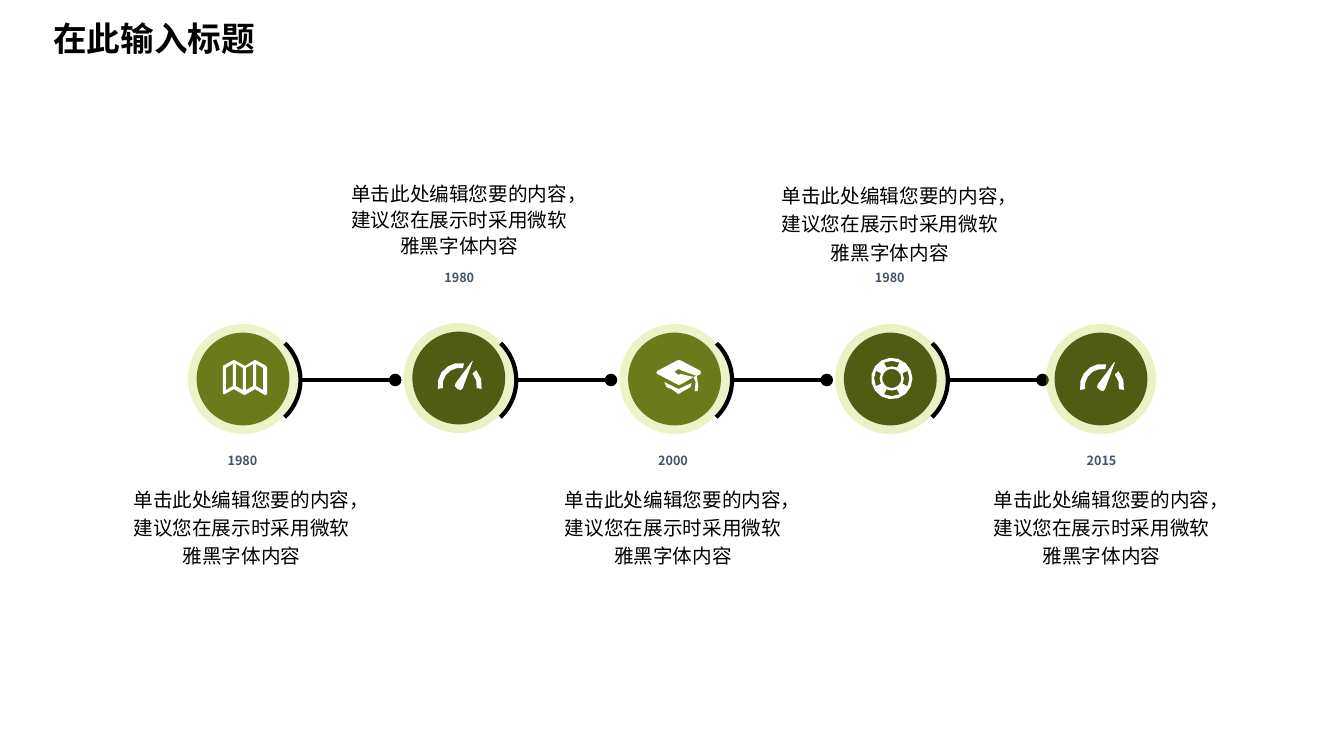
from math import cos, sin, radians
from pptx import Presentation
from pptx.dml.color import RGBColor as RGB
from pptx.enum.shapes import MSO_CONNECTOR as LINK, MSO_SHAPE as KIND
from pptx.enum.text import MSO_AUTO_SIZE as FIT, PP_ALIGN as ALIGN
from pptx.oxml.xmlchemy import OxmlElement as Node
from pptx.util import Inches as In, Pt

FONT = "Noto Sans CJK SC"
BODY = "单击此处编辑您要的内容，建议您在展示时采用微软雅黑字体内容"

deck = Presentation()
deck.slide_width, deck.slide_height = In(13.33), In(7.5)
slide = deck.slides.add_slide(deck.slide_layouts[6])
shapes = slide.shapes


def paint(fill, tint, alpha=None):
    fill.solid()
    fill.fore_color.rgb = RGB.from_string(tint)
    if alpha:
        clear = Node("a:alpha")
        clear.set("val", str(alpha * 1000))
        fill._xPr.find(".//{*}srgbClr").append(clear)


def write(text, left, top, wide, high, size, tint="000000", bold=False,
          wrap=True, align=ALIGN.CENTER, space=1.0):
    box = shapes.add_textbox(In(left), In(top), In(wide), In(high))
    frame = box.text_frame
    frame.word_wrap = wrap
    frame.auto_size = FIT.SHAPE_TO_FIT_TEXT
    para = frame.paragraphs[0]
    para.alignment, para.line_spacing = align, space
    run = para.add_run()
    run.text = text
    font = run.font
    font.name, font.size, font.bold = FONT, Pt(size), bold
    paint(font.fill, tint)
    east = Node("a:ea")
    east.set("typeface", FONT)
    font._element.find("{*}latin").addnext(east)


chart = [[(43, 6), (32, 0), (22, 6), (11, 0), (0, 6), (0, 34),
          (2, 34), (11, 29), (21.5, 35), (32, 29), (42, 35), (44, 34), (44, 8)]]
for i in range(4):
    x, a, b = 3 + 10 * i, 8 - 4 * (i % 2), 4 + 4 * (i % 2)
    chart.append([(x, a), (x + 7, b), (x + 7, b + 22), (x, a + 22)])

gauge = [[(18, 23), (17, 26), (20, 29), (23, 30), (25, 28), (35, 1), (34, 1.5)]]
cap = [[(8, 22), (10, 27), (15, 29), (22, 34), (25, 32), (34, 27), (35, 23), (22, 29)],
       [(44, 11), (25, 1), (22.5, 0), (20, 1), (1, 11), (0, 12.5), (1, 14), (20, 24),
        (22.5, 25), (25, 24), (37, 17), (24, 14), (22, 15), (18, 12),
        (22, 9), (26, 11), (40, 16), (44, 14)],
       [(38, 31), (41, 31), (41.5, 25), (40, 16), (37, 17), (39, 22)]]
buoy = []

bands = [(gauge, 22, 25, 17, 22, 170, 281), (gauge, 22, 25, 17, 22, -42, 10),
         (buoy, 20.5, 20.5, 9.5, 20.5, 0, 360)]
bands += [(buoy, 20.5, 20.5, 12, 17.5, a - 26, a + 26) for a in range(0, 360, 90)]
for icon, x, y, small, big, a, b in bands:
    parts = round((b - a) / 24)
    turns = [radians(a + (b - a) * i / parts) for i in range(parts + 1)]
    rim = [(big, t) for t in turns] + [(small, t) for t in reversed(turns)]
    icon.append([(x + r * cos(t), y + r * sin(t)) for r, t in rim])

STEP = 2.14
MID = 3.77
LIGHT, DARK = ("C1D84E", "6B7B1B"), ("BBD43B", "505C14")
LOW, HIGH = (4.44, 4.74), (2.63, 1.73)
stops = [("1980", 2.41, 3.76, LIGHT, chart, 0.2, 0.19, 2.15, 1.2, LOW, 0.95, 1.2),
         ("1980", 4.55, 3.75, DARK, gauge, 0.21, 0.18, 4.3, 3.36, HIGH, 0.88, 1.1),
         ("2000", 6.69, 3.76, LIGHT, cap, 0.18, 0.19, 6.42, 5.48, LOW, 0.95, 1.2),
         ("1980", 8.83, 3.76, DARK, buoy, 0.19, 0.21, 8.57, 7.63, HIGH, 0.93, 1.2),
         ("2015", 10.92, 3.76, DARK, gauge, 0.21, 0.18, 10.67, 9.73, LOW, 0.95, 1.2)]

for i, stop in enumerate(stops):
    year, x, y, (pale, deep), icon, dx, dy, date, note, tops, high, space = stop
    for size, tint, alpha in ((1.09, pale, 30), (0.92, deep, None)):
        disc = shapes.add_shape(KIND.OVAL, In(x - size / 2), In(y - size / 2), In(size), In(size))
        disc.shadow.inherit = False
        paint(disc.fill, tint, alpha)
        disc.line.fill.background()

    loops = [[(In(x - dx + u / 100), In(y - dy + v / 100)) for u, v in loop] for loop in icon]
    pen = shapes.build_freeform(*loops[0][0])
    pen.add_line_segments(loops[0][1:], close=True)
    for loop in loops[1:]:
        pen.move_to(*loop[0])
        pen.add_line_segments(loop[1:], close=True)
    sign = pen.convert_to_shape()
    sign.shadow.inherit = False
    paint(sign.fill, "FFFFFF")
    sign.line.fill.background()

    if i < 4:
        left = 2.99 + STEP * i
        rod = shapes.add_connector(LINK.STRAIGHT, In(left), In(MID), In(left + 0.93), In(MID))
        rod._element.spPr.append(Node("a:effectLst"))
        arc = shapes.add_shape(KIND.ARC, In(left - 1.03), In(MID - 0.51), In(1.02), In(1.02))
        arc.shadow.inherit = False
        arc.rotation = 270
        arc.adjustments[0], arc.adjustments[1] = 26.57, 81.76
        arc.fill.background()
        for part in (rod, arc):
            paint(part.line.fill, "000000")
            part.line.width = Pt(3)
        tail = Node("a:tailEnd")
        tail.set("type", "oval")
        rod.line._ln.append(tail)

    write(year, date, tops[0], 0.51, 0.25, 9, tint="44546A", bold=True, wrap=False)
    write(BODY, note, tops[1], 2.39, high, 14, space=space)

write("在此输入标题", 0.43, 0.13, 2.61, 0.5, 24, bold=True, align=ALIGN.LEFT)

deck.save("out.pptx")
